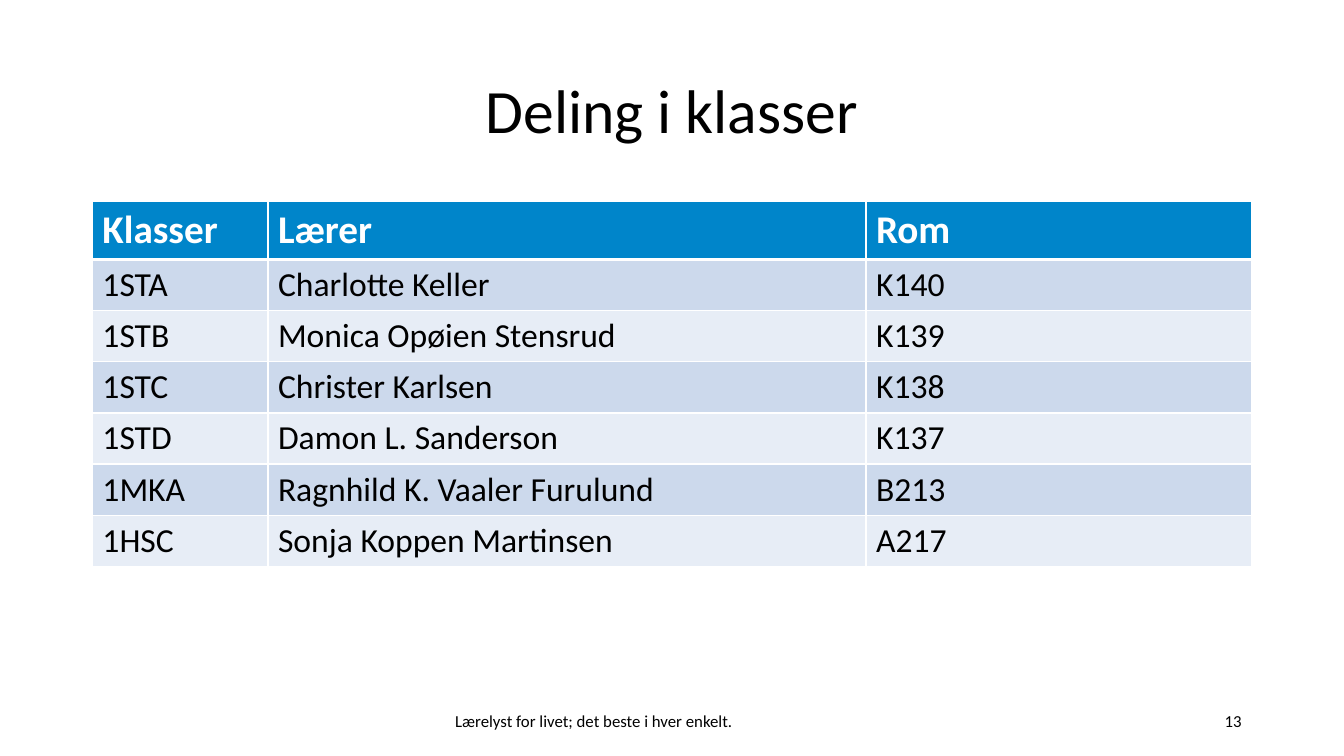
from dataclasses import dataclass

from lxml import etree
from pptx import Presentation
from pptx import util as u
from pptx.dml.color import RGBColor
from pptx.enum import text
from pptx.oxml import ns


@dataclass(frozen=True)
class Theme:
    font: str = "Calibri"
    ink: str = "000000"
    white: str = "FFFFFF"
    header: str = "0085CA"
    bands: tuple = ("CCD9EC", "E7EDF6")
    title_size: int = 44
    header_size: int = 28
    body_size: int = 24
    footer_size: int = 12
    thin: int = 1
    thick: int = 3


@dataclass(frozen=True)
class Area:
    """Place on the slide, in grid columns and rows."""
    left: float
    top: float
    width: float
    height: float

    def box(self) -> tuple:
        return (across(self.left), down(self.top), across(self.width), down(self.height))


@dataclass(frozen=True)
class SchoolClass:
    name: str
    teacher: str
    room: str


@dataclass(frozen=True)
class FooterItem:
    area: Area
    words: str
    align: text.PP_ALIGN


THEME = Theme()
SLIDE_WIDTH, SLIDE_HEIGHT = u.Inches(13.33), u.Inches(7.5)
GRID_COLUMNS, GRID_ROWS = 160, 150

TITLE_AREA = Area(11, 8, 138, 29)
COLUMN_SPANS = (20.9, 71.2, 45.9)
HEADER_SPAN, BODY_SPAN = 11.4, 10

HEADINGS = SchoolClass("Klasser", "Lærer", "Rom")
CLASSES = (
    SchoolClass("1STA", "Charlotte Keller", "K140"),
    SchoolClass("1STB", "Monica Opøien Stensrud", "K139"),
    SchoolClass("1STC", "Christer Karlsen", "K138"),
    SchoolClass("1STD", "Damon L. Sanderson", "K137"),
    SchoolClass("1MKA", "Ragnhild K. Vaaler Furulund", "B213"),
    SchoolClass("1HSC", "Sonja Koppen Martinsen", "A217"),
)
TABLE_AREA = Area(11, 40, sum(COLUMN_SPANS), HEADER_SPAN + BODY_SPAN * len(CLASSES))

FOOTER = (
    FooterItem(Area(53, 139, 54, 8), "Lærelyst for livet; det beste i hver enkelt.",
               text.PP_ALIGN.LEFT),
    FooterItem(Area(113, 139, 36, 8), "13", text.PP_ALIGN.RIGHT),
)


def across(columns: float) -> int:
    return round(SLIDE_WIDTH * columns / GRID_COLUMNS)


def down(rows: float) -> int:
    return round(SLIDE_HEIGHT * rows / GRID_ROWS)


def add_run(paragraph, words: str, size: int, color: str, bold: bool = False) -> None:
    run = paragraph.add_run()
    run.text = words
    run.font.name = THEME.font
    run.font.size = u.Pt(size)
    run.font.bold = bold
    run.font.color.rgb = RGBColor.from_string(color)


def add_border(cell, side: str, points: int) -> None:
    properties = cell._tc.get_or_add_tcPr()
    line = etree.SubElement(properties, ns.qn(f"a:ln{side}"), w=str(u.Pt(points)))
    fill = etree.SubElement(line, ns.qn("a:solidFill"))
    etree.SubElement(fill, ns.qn("a:srgbClr"), val=THEME.white)


def add_title(slide) -> None:
    title = slide.shapes.title
    title.left, title.top, title.width, title.height = TITLE_AREA.box()
    frame = title.text_frame
    frame.auto_size = text.MSO_AUTO_SIZE.NONE
    frame.vertical_anchor = text.MSO_ANCHOR.MIDDLE
    paragraph = frame.paragraphs[0]
    paragraph.alignment = text.PP_ALIGN.CENTER
    paragraph.line_spacing = 0.9
    add_run(paragraph, "Deling i klasser", THEME.title_size, THEME.ink)


def add_class_table(slide) -> None:
    records = (HEADINGS, *CLASSES)
    table = slide.shapes.add_table(len(records), len(COLUMN_SPANS), *TABLE_AREA.box()).table
    for column, span in zip(table.columns, COLUMN_SPANS):
        column.width = across(span)

    for index, record in enumerate(records):
        is_header = index == 0
        table.rows[index].height = down(HEADER_SPAN if is_header else BODY_SPAN)
        fill = THEME.header if is_header else THEME.bands[(index - 1) % 2]
        size = THEME.header_size if is_header else THEME.body_size
        color = THEME.white if is_header else THEME.ink
        # The rule below the header is shared by the first two rows
        top = THEME.thick if index == 1 else THEME.thin
        bottom = THEME.thick if is_header else THEME.thin
        for cell, words in zip(table.rows[index].cells,
                               (record.name, record.teacher, record.room)):
            for side, points in (("L", THEME.thin), ("R", THEME.thin), ("T", top), ("B", bottom)):
                add_border(cell, side, points)
            cell.fill.solid()
            cell.fill.fore_color.rgb = RGBColor.from_string(fill)
            add_run(cell.text_frame.paragraphs[0], words, size, color, bold=is_header)


def add_footer_item(slide, item: FooterItem) -> None:
    frame = slide.shapes.add_textbox(*item.area.box()).text_frame
    frame.word_wrap = True
    frame.vertical_anchor = text.MSO_ANCHOR.MIDDLE
    paragraph = frame.paragraphs[0]
    paragraph.alignment = item.align
    add_run(paragraph, item.words, THEME.footer_size, THEME.ink)


def main() -> None:
    presentation = Presentation()
    presentation.slide_width, presentation.slide_height = SLIDE_WIDTH, SLIDE_HEIGHT
    slide = presentation.slides.add_slide(presentation.slide_layouts.get_by_name("Title Only"))

    # Title and table of classes
    add_title(slide)
    add_class_table(slide)

    # Motto and page number
    for item in FOOTER:
        add_footer_item(slide, item)

    presentation.save("out.pptx")


if __name__ == "__main__":
    main()
